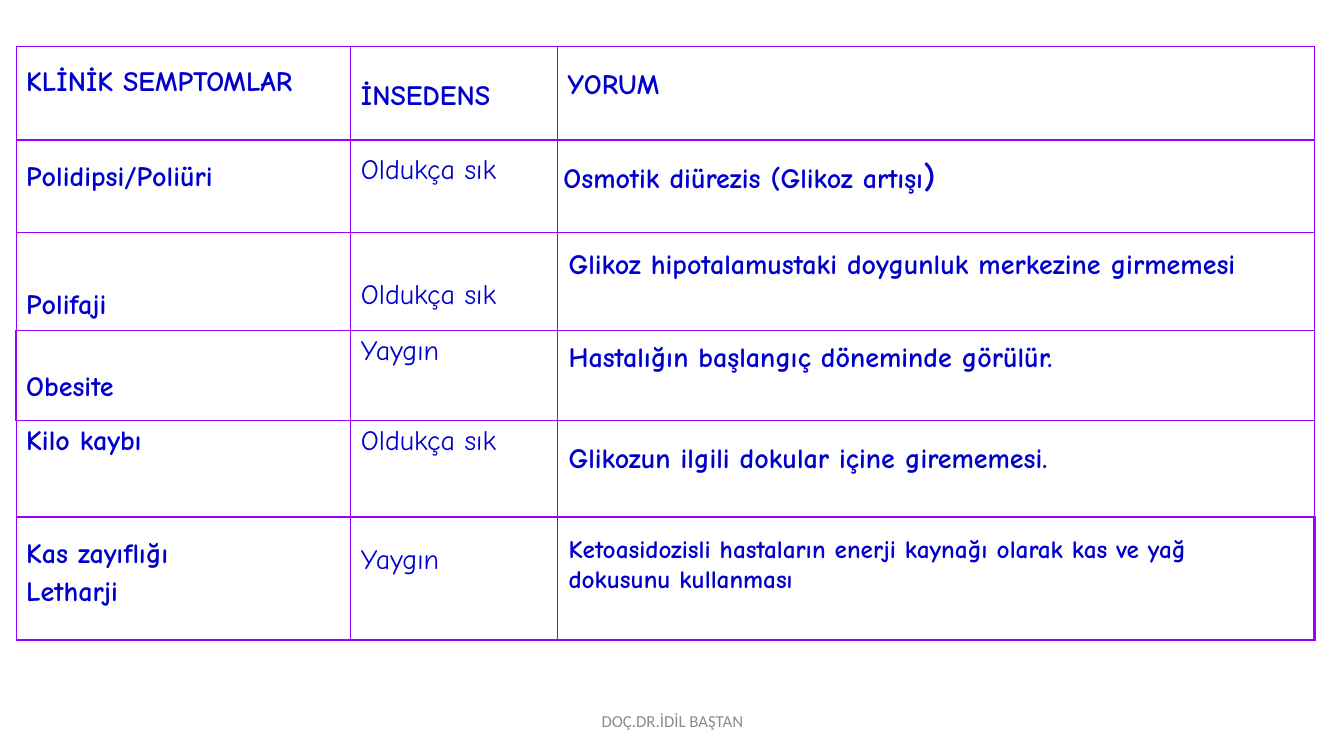
from dataclasses import dataclass

from lxml import etree
from pptx import Presentation, util as u
from pptx.dml.color import RGBColor as Rgb
from pptx.enum import text as t
from pptx.oxml import ns


@dataclass(frozen=True)
class Theme:
    ink: str = "0000CC"
    line: str = "9900FF"
    paper: str = "FFFFFF"
    grey: str = "8C8C8C"
    font: str = "Comic Neue"
    foot: str = "Calibri"
    body: int = 20
    big: int = 24
    note: int = 18
    small: int = 12


look = Theme()


def style(run, size=look.body, bold=True, name=look.font, color=look.ink):
    form = {"size": u.Pt(size), "bold": bold, "name": name}
    for key, val in form.items():
        setattr(run.font, key, val)
    run.font.color.rgb = Rgb.from_string(color)


def edge(cell, side, width):
    props = cell._tc.get_or_add_tcPr()
    line = etree.SubElement(props, ns.qn("a:" + side), w=str(u.Pt(width)))
    fill = etree.SubElement(line, ns.qn("a:solidFill"))
    etree.SubElement(fill, ns.qn("a:srgbClr"), val=look.line)


deck = Presentation()
deck.slide_width, deck.slide_height = u.Inches(13.33), u.Inches(7.5)
slide = deck.slides.add_slide(deck.slide_layouts[6])

# Symptom table: each cell holds its lines and the first line's spacing
rows = [
    (0.93, [("KLİNİK SEMPTOMLAR", 1.47), ("İNSEDENS", 1.9), ("YORUM", 1.55)]),
    (0.92, [("Polidipsi/Poliüri", 1.5), ("Oldukça sık", 1.3), ("", 1)]),
    (0.97, [("Polifaji", 2.6), ("Oldukça sık", 2.3), ("", 1)]),
    (0.89, [("Obesite", 2.1), ("Yaygın", 1), ("", 1)]),
    (0.96, [("Kilo kaybı", 1), ("Oldukça sık", 1), ("", 1)]),
    (1.22, [("Kas zayıflığı\nLetharji", 1.5), ("Yaygın", 1.7), ("", 1)]),
]
cols = [3.32, 2.05, 7.51]
thick = {(3, 0, "lnL"), (5, 2, "lnR")}

frame = slide.shapes.add_table(
    len(rows), len(cols), u.Inches(0.16), u.Inches(0.46),
    u.Inches(sum(cols)), u.Inches(sum(row[0] for row in rows)))
table = frame.table
table.first_row = table.horz_banding = False
for col, width in zip(table.columns, cols):
    col.width = u.Inches(width)

for r, (height, cells) in enumerate(rows):
    table.rows[r].height = u.Inches(height)
    for c, (words, space) in enumerate(cells):
        cell = table.cell(r, c)
        for side in ("lnL", "lnR", "lnT", "lnB"):
            edge(cell, side, 2.25 if (r, c, side) in thick else 1)
        cell.fill.solid()
        cell.fill.fore_color.rgb = Rgb.from_string(look.paper)
        cell.text = words
        for n, para in enumerate(cell.text_frame.paragraphs):
            para.line_spacing = 1.0 if n else space
            if n:
                para.space_before = u.Pt(4)
            for run in para.runs:
                style(run, bold=r == 0 or c != 1)

# Comments over the last column
notes = [
    (5.49, 1.49, 6.95, 0.91, look.body,
     [["Osmotik diürezis (Glikoz artışı", ")"]]),
    (5.54, 2.4, 7.79, 0.77, look.body,
     [["Glikoz hipotalamustaki doygunluk merkezine girmemesi"]]),
    (5.54, 3.32, 5.62, 0.77, look.body,
     [["Hastalığın başlangıç döneminde görülür."]]),
    (5.54, 4.32, 5.62, 0.77, look.body,
     [["Glikozun ilgili dokular içine girememesi."]]),
    (5.54, 5.24, 7.38, 1.01, look.note,
     [["Ketoasidozisli hastaların enerji kaynağı olarak kas ve yağ"],
      ["dokusunu kullanması"]]),
]
for left, top, width, height, size, lines in notes:
    box = slide.shapes.add_textbox(*map(u.Inches, (left, top, width, height)))
    body = box.text_frame
    body.word_wrap = True
    for n, parts in enumerate(lines):
        para = body.add_paragraph() if n else body.paragraphs[0]
        for part in parts:
            run = para.add_run()
            run.text = part
            style(run, look.big if part == ")" else size)

# Footer
box = slide.shapes.add_textbox(*map(u.Inches, (4.42, 6.95, 4.5, 0.4)))
body = box.text_frame
body.word_wrap = True
body.vertical_anchor = t.MSO_ANCHOR.MIDDLE
para = body.paragraphs[0]
para.alignment = t.PP_ALIGN.CENTER
run = para.add_run()
run.text = "DOÇ.DR.İDİL BAŞTAN"
style(run, look.small, False, look.foot, look.grey)

deck.save("out.pptx")
